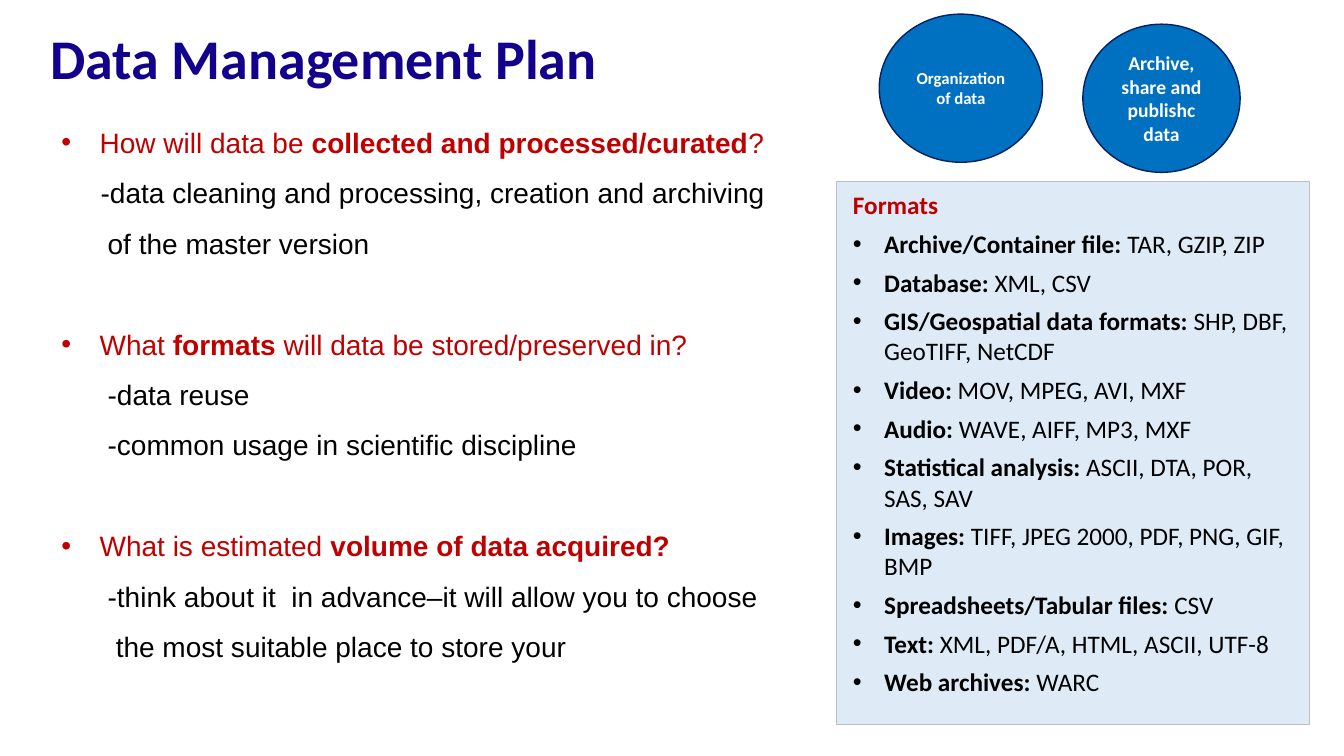
from lxml import etree
from pptx import Presentation
from pptx.dml.color import RGBColor
from pptx.enum.shapes import MSO_SHAPE
from pptx.enum.text import MSO_ANCHOR, PP_ALIGN
from pptx.oxml.ns import qn
from pptx.util import Inches, Pt

RECT, OVAL = MSO_SHAPE.RECTANGLE, MSO_SHAPE.OVAL
TOP, MIDDLE = MSO_ANCHOR.TOP, MSO_ANCHOR.MIDDLE
LEFT, CENTER = PP_ALIGN.LEFT, PP_ALIGN.CENTER

INDIGO = RGBColor(0x12, 0x01, 0x8D)
RED = RGBColor(0xC0, 0x00, 0x00)
BLACK = RGBColor(0x00, 0x00, 0x00)
WHITE = RGBColor(0xFF, 0xFF, 0xFF)
BLUE = RGBColor(0x00, 0x70, 0xC0)
NAVY = RGBColor(0x00, 0x20, 0x60)
PALE_BLUE = RGBColor(0xDE, 0xEB, 0xF7)
GREY = RGBColor(0xBF, 0xBF, 0xBF)

TITLE = "Data Management Plan"

# Each question: (text, bold) runs, then (left indent, text) lines below it
QUESTIONS = [
    ([("How will data be ", False), ("collected and processed/curated", True), ("?", False)],
     [(0.39, "-data cleaning and processing, creation and archiving"),
      (0.46, "of the master version")]),
    ([("What ", False), ("formats ", True), ("will data be stored/preserved in?", False)],
     [(0.46, "-data reuse"),
      (0.46, "-common usage in scientific discipline")]),
    ([("What is estimated ", False), ("volume of data acquired?", True)],
     [(0.46, "-think about it  in advance–it will allow you to choose"),
      (0.54, "the most suitable place to store your")]),
]

FORMATS = [
    ("Archive/Container file:", "TAR, GZIP, ZIP"),
    ("Database:", "XML, CSV"),
    ("GIS/Geospatial data formats:", "SHP, DBF, GeoTIFF, NetCDF"),
    ("Video:", "MOV, MPEG, AVI, MXF"),
    ("Audio:", "WAVE, AIFF, MP3, MXF"),
    ("Statistical analysis:", "ASCII, DTA, POR, SAS, SAV"),
    ("Images:", "TIFF, JPEG 2000, PDF, PNG, GIF, BMP"),
    ("Spreadsheets/Tabular files:", "CSV"),
    ("Text:", "XML, PDF/A, HTML, ASCII, UTF-8"),
    ("Web archives:", "WARC"),
]

# Text, size, (left, top, width, height)
STAGES = [
    ("Organization of data", 12, (8.72, 0.14, 1.62, 1.47)),
    ("Archive, share and publishc data", 14, (10.74, 0.24, 1.56, 1.47)),
]


def set_frame(sp, insets, anchor=TOP):
    """Wrap the text, set insets (left, top, right, bottom); return the frame."""
    tf = sp.text_frame
    tf.word_wrap = True
    tf.vertical_anchor = anchor
    tf.margin_left, tf.margin_top, tf.margin_right, tf.margin_bottom = map(Inches, insets)
    return tf


def add_text_box(slide, box, insets):
    return set_frame(slide.shapes.add_textbox(*map(Inches, box)), insets)


def add_filled_shape(slide, kind, box, fill, line, width):
    sp = slide.shapes.add_shape(kind, *map(Inches, box))
    sp.shadow.inherit = False
    sp.fill.solid()
    sp.fill.fore_color.rgb = fill
    sp.line.color.rgb = line
    sp.line.width = Pt(width)
    return sp


def add_paragraph(tf, runs, font, size, color, align=LEFT, before=0, spacing=1.0,
                  indent=0, bullet=False):
    """Fill the empty first paragraph or append one; runs are (text, bold)."""
    p = tf.paragraphs[0] if not tf.paragraphs[0].runs else tf.add_paragraph()
    p.alignment = align
    p.space_before = Pt(before)
    p.line_spacing = spacing
    pPr = p._p.get_or_add_pPr()
    pPr.set("marL", str(Inches(indent)))
    pPr.set("indent", str(-Inches(indent) if bullet else 0))
    if bullet:
        etree.SubElement(pPr, qn("a:buFont")).set("typeface", "Arial")
        etree.SubElement(pPr, qn("a:buChar")).set("char", "•")
    for text, bold in runs:
        r = p.add_run()
        r.text = text
        r.font.name = font
        r.font.size = Pt(size)
        r.font.bold = bold
        r.font.color.rgb = color


def add_questions(slide):
    tf = add_text_box(slide, (0.51, 1.03, 7.36, 6.16), (0.1, 0.05, 0.1, 0.05))
    for i, (question, lines) in enumerate(QUESTIONS):
        add_paragraph(tf, question, "Arial", 20, RED, before=36 if i else 0,
                      spacing=1.5, indent=0.38, bullet=True)
        for indent, text in lines:
            add_paragraph(tf, [(text, False)], "Arial", 20, BLACK, spacing=1.5, indent=indent)


def add_formats(slide):
    sp = add_filled_shape(slide, RECT, (8.3, 1.8, 4.69, 5.39), PALE_BLUE, GREY, 0.75)
    tf = set_frame(sp, (0.16, 0.08, 0.16, 0.08))
    add_paragraph(tf, [("Formats", True)], "Calibri", 18, RED, before=6)
    for kind, names in FORMATS:
        add_paragraph(tf, [(kind + " ", True), (names, False)], "Calibri", 18, BLACK,
                      before=6, indent=0.31, bullet=True)


def add_stages(slide):
    for text, size, box in STAGES:
        sp = add_filled_shape(slide, OVAL, box, BLUE, NAVY, 1)
        tf = set_frame(sp, (0.1, 0.05, 0.1, 0.05), MIDDLE)
        add_paragraph(tf, [(text, True)], "Calibri", size, WHITE, align=CENTER)


def main():
    prs = Presentation()
    prs.slide_width, prs.slide_height = Inches(13.33), Inches(7.5)
    slide = prs.slides.add_slide(prs.slide_layouts[6])
    title = add_text_box(slide, (0.03, 0.03, 13.3, 0.78), (0.47, 0.2, 0.08, 0.05))
    add_paragraph(title, [(TITLE, True)], "Calibri", 40, INDIGO)
    add_questions(slide)
    add_formats(slide)
    add_stages(slide)
    prs.save("out.pptx")


if __name__ == "__main__":
    main()
